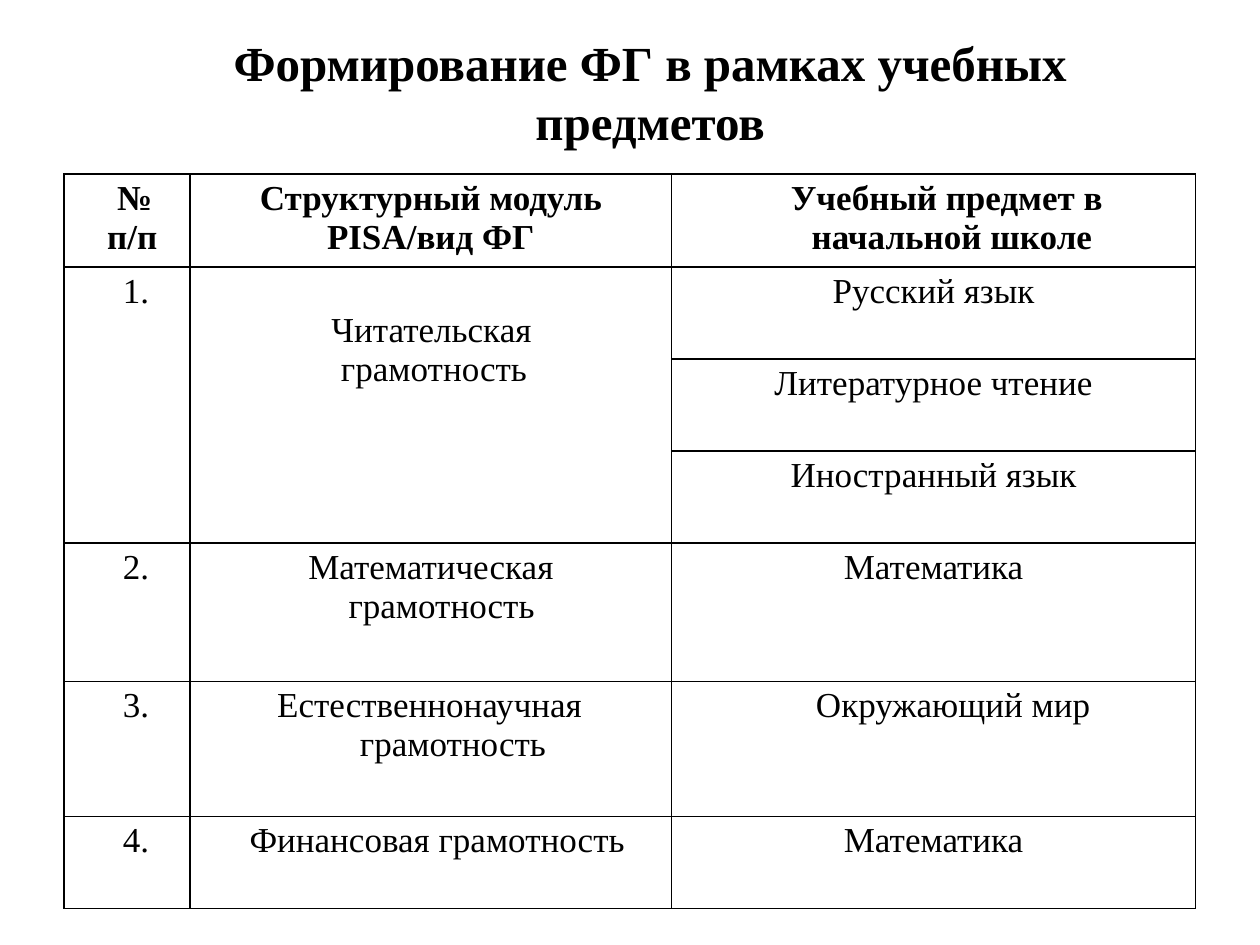
import pptx
import pptx.util
import pptx.dml.color
import pptx.enum.text
import pptx.oxml

Inches = pptx.util.Inches
CENTER = pptx.enum.text.PP_ALIGN.CENTER
TOP = pptx.enum.text.MSO_ANCHOR.TOP
DRAWING = "http://schemas.openxmlformats.org/drawingml/2006/main"


def color(value):
    return pptx.dml.color.RGBColor.from_string(value)


def format_paragraph(paragraph, size, bold):
    paragraph.alignment = CENTER
    paragraph.font.color.rgb = color("000000")
    values = {"name": "Times New Roman", "size": pptx.util.Pt(size), "bold": bold}
    for name, value in values.items():
        setattr(paragraph.font, name, value)


presentation = pptx.Presentation()
presentation.slide_width = Inches(10)
presentation.slide_height = Inches(7.5)
slide = presentation.slides.add_slide(presentation.slide_layouts[5])

title = slide.shapes.title
for name, value in {"left": 0.83, "top": 0.21, "width": 8.66, "height": 1.04}.items():
    setattr(title, name, Inches(value))
title.text_frame.text = "Формирование ФГ в рамках учебных предметов"
title.text_frame.auto_size = pptx.enum.text.MSO_AUTO_SIZE.NONE
title.text_frame.vertical_anchor = TOP
format_paragraph(title.text_frame.paragraphs[0], 28, True)

column_widths = [1, 3.82, 4.16]
row_heights = [0.74, 0.73, 0.73, 0.73, 1.1, 1.07, 0.73]
table = slide.shapes.add_table(
    len(row_heights), len(column_widths),
    Inches(0.51), Inches(1.38), Inches(sum(column_widths)), Inches(sum(row_heights)),
).table
table.first_row = False
table.horz_banding = False
for column, width in zip(table.columns, column_widths):
    column.width = Inches(width)
for row, height in zip(table.rows, row_heights):
    row.height = Inches(height)

for cell in table.iter_cells():
    for side in ("left", "right", "top", "bottom"):
        setattr(cell, f"margin_{side}", Inches(0.04))
    cell.vertical_anchor = TOP
    properties = cell._tc.get_or_add_tcPr()
    for edge in ("lnL", "lnR", "lnT", "lnB"):
        properties.append(pptx.oxml.parse_xml(
            f'<a:{edge} xmlns:a="{DRAWING}" w="12700"><a:solidFill>'
            f'<a:srgbClr val="000000"/></a:solidFill></a:{edge}>'
        ))
    cell.fill.background()

for column in (0, 1):
    table.cell(1, column).merge(table.cell(3, column))
table.cell(1, 1).margin_top = Inches(0.35)

# (row, column): paragraphs of (text, left margin, right margin, first-line indent)
cell_paragraphs = {
    (0, 0): [("№", 0.12, 0, 0), ("п/п", 0.08, 0, 0)],
    (0, 1): [("Структурный модуль", 0.17, 0.17, 0), ("PISA/вид ФГ", 0.17, 0.17, 0)],
    (0, 2): [("Учебный предмет в", 0.21, 0, 0), ("начальной школе", 0.29, 0, 0)],
    (1, 1): [("Читательская грамотность", 0.63, 0.58, -0.04)],
    (4, 1): [("Математическая грамотность", 0.63, 0.46, -0.17)],
    (5, 1): [("Естественнонаучная грамотность", 0.63, 0.28, -0.37)],
    (6, 1): [("Финансовая грамотность", 0.1, 0, 0)],
    (1, 2): [("Русский язык", 0.18, 0.18, 0)],
    (2, 2): [("Литературное чтение", 0.18, 0.18, 0)],
    (3, 2): [("Иностранный язык", 0.18, 0.18, 0)],
    (4, 2): [("Математика", 0.18, 0.18, 0)],
    (5, 2): [("Окружающий мир", 0.31, 0, 0)],
    (6, 2): [("Математика", 0.18, 0.18, 0)],
}
for number, row in enumerate((1, 4, 5, 6), start=1):
    cell_paragraphs[row, 0] = [(f"{number}.", 0.14, 0, 0)]

for (row, column), paragraphs in cell_paragraphs.items():
    text_frame = table.cell(row, column).text_frame
    text_frame.text = "\n".join(entry[0] for entry in paragraphs)
    for paragraph, (text, left, right, indent) in zip(text_frame.paragraphs, paragraphs):
        format_paragraph(paragraph, 20, row == 0)
        properties = paragraph._p.get_or_add_pPr()
        for name, value in {"marL": left, "marR": right, "indent": indent}.items():
            properties.set(name, str(int(Inches(value))))

presentation.save("out.pptx")
